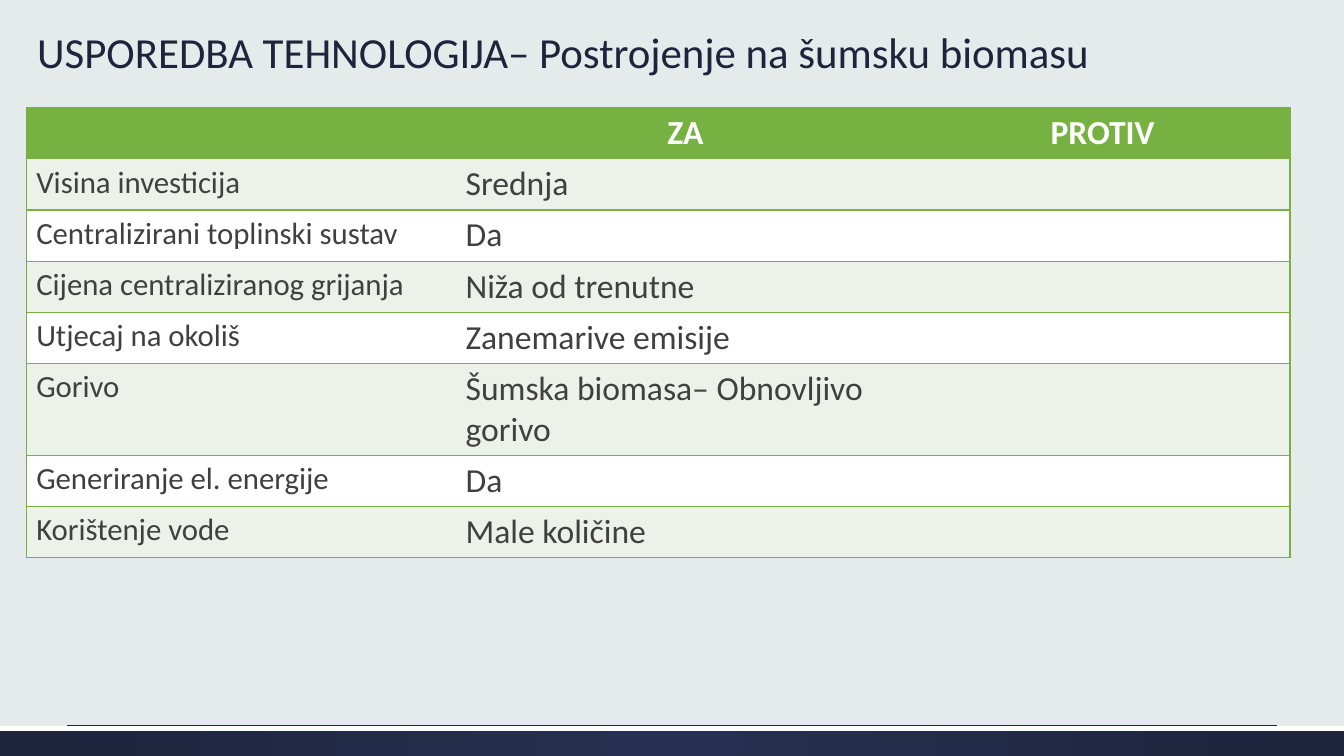
from lxml.etree import SubElement
from pptx import Presentation
from pptx.dml.color import RGBColor
from pptx.enum.shapes import MSO_CONNECTOR as Link, MSO_SHAPE as Preset
from pptx.enum.text import MSO_ANCHOR as Anchor, MSO_AUTO_SIZE as AutoSize, PP_ALIGN as Align
from pptx.oxml.ns import qn
from pptx.util import Pt

NAVY = RGBColor(0x1D, 0x24, 0x3C)
BLUE = RGBColor(0x26, 0x30, 0x50)
GREEN = RGBColor(0x77, 0xB1, 0x42)
PALE_GREEN = RGBColor(0xEC, 0xF2, 0xE9)
WHITE = RGBColor(0xFF, 0xFF, 0xFF)
GRAY = RGBColor(0x40, 0x40, 0x40)
BACKGROUND = RGBColor(0xE5, 0xEA, 0xEA)

COLUMNS = [306.7, 328.3, 267.8]
ROW_HEIGHT = 36.5
TALL_ROW_HEIGHT = 65.8
TALL_ROW = "Gorivo"
ROWS = [
    ("", "ZA", "PROTIV"),
    ("Visina investicija", "Srednja", ""),
    ("Centralizirani toplinski sustav", "Da", ""),
    ("Cijena centraliziranog grijanja", "Niža od trenutne", ""),
    ("Utjecaj na okoliš", "Zanemarive emisije", ""),
    (TALL_ROW, "Šumska biomasa– Obnovljivo gorivo", ""),
    ("Generiranje el. energije", "Da", ""),
    ("Korištenje vode", "Male količine", ""),
]


class SlideBuilder:
    """Hold the slide style and draw each kind of element on the current page."""

    font = "Calibri"

    def __init__(self, deck):
        self.page = deck.slides.add_slide(deck.slide_layouts[5])
        fill = self.page.background.fill
        fill.solid()
        fill.fore_color.rgb = BACKGROUND

    def add_span(self, para, text, size, color, bold=False):
        span = para.add_run()
        span.text = text
        span.font.name = self.font
        span.font.size = Pt(size)
        span.font.bold = bold
        span.font.color.rgb = color

    def title(self, text, left, top, width, height, size):
        box = self.page.shapes.title
        box.left, box.top, box.width, box.height = Pt(left), Pt(top), Pt(width), Pt(height)
        frame = box.text_frame
        frame.word_wrap = True
        frame.auto_size = AutoSize.NONE
        frame.vertical_anchor = Anchor.BOTTOM
        para = frame.paragraphs[0]
        para.alignment = Align.LEFT
        para.line_spacing = 0.9
        self.add_span(para, text, size, NAVY)

    def bar(self, top, height, *colors):
        shape = self.page.shapes.add_shape(Preset.RECTANGLE, 0, Pt(top), Pt(960), Pt(height))
        shape.shadow.inherit = False
        shape.line.fill.background()
        if len(colors) == 1:
            shape.fill.solid()
            shape.fill.fore_color.rgb = colors[0]
            return
        shape.fill.gradient()
        for stop, color in zip(shape.fill.gradient_stops, colors):
            stop.color.rgb = color
        gradient = shape._element.spPr.find(qn("a:gradFill"))
        gradient.remove(gradient.find(qn("a:lin")))
        circle = SubElement(gradient, qn("a:path"))
        circle.set("path", "circle")
        SubElement(circle, qn("a:fillToRect"), l="50000", t="50000", r="50000", b="50000")

    def rule(self, left, right, top):
        line = self.page.shapes.add_connector(Link.STRAIGHT, Pt(left), Pt(top), Pt(right), Pt(top))
        line.line.color.rgb = NAVY
        line.line.width = Pt(0.75)
        SubElement(line._element.spPr, qn("a:effectLst"))

    def border(self, cell, sides):
        properties = cell._tc.get_or_add_tcPr()
        for side in "LRTB":
            line = SubElement(properties, qn(f"a:ln{side}"), w=str(Pt(1)))
            if side in sides:
                fill = SubElement(line, qn("a:solidFill"))
                SubElement(fill, qn("a:srgbClr"), val=str(GREEN))
            else:
                SubElement(line, qn("a:noFill"))

    def table(self, rows, columns, left, top):
        heights = [TALL_ROW_HEIGHT if row[0] == TALL_ROW else ROW_HEIGHT for row in rows]
        table = self.page.shapes.add_table(
            len(rows), len(columns), Pt(left), Pt(top), Pt(sum(columns)), Pt(sum(heights))
        ).table
        for column, width in zip(table.columns, columns):
            column.width = Pt(width)
        for r, (row, height) in enumerate(zip(rows, heights)):
            table.rows[r].height = Pt(height)
            for c, text in enumerate(row):
                cell = table.cell(r, c)
                self.border(cell, ("LTB", "TB", "RTB")[c])
                cell.fill.solid()
                cell.fill.fore_color.rgb = GREEN if r == 0 else (WHITE, PALE_GREEN)[r % 2]
                if not text:
                    continue
                para = cell.text_frame.paragraphs[0]
                if r == 0:
                    para.alignment = Align.CENTER
                    self.add_span(para, text, 24, WHITE, True)
                else:
                    self.add_span(para, text, 22 if c == 0 else 24, GRAY)


def main():
    deck = Presentation()
    deck.slide_width, deck.slide_height = Pt(960), Pt(540)
    builder = SlideBuilder(deck)
    builder.bar(518.4, 21.6, BLUE, NAVY)
    builder.bar(518.4, 3.6, WHITE)
    builder.rule(48, 912, 518)
    builder.title("USPOREDBA TEHNOLOGIJA– Postrojenje na šumsku biomasu", 19.4, 13.7, 827.3, 45.4, 30.6)
    builder.table(ROWS, COLUMNS, 18.7, 77)
    deck.save("out.pptx")


if __name__ == "__main__":
    main()
